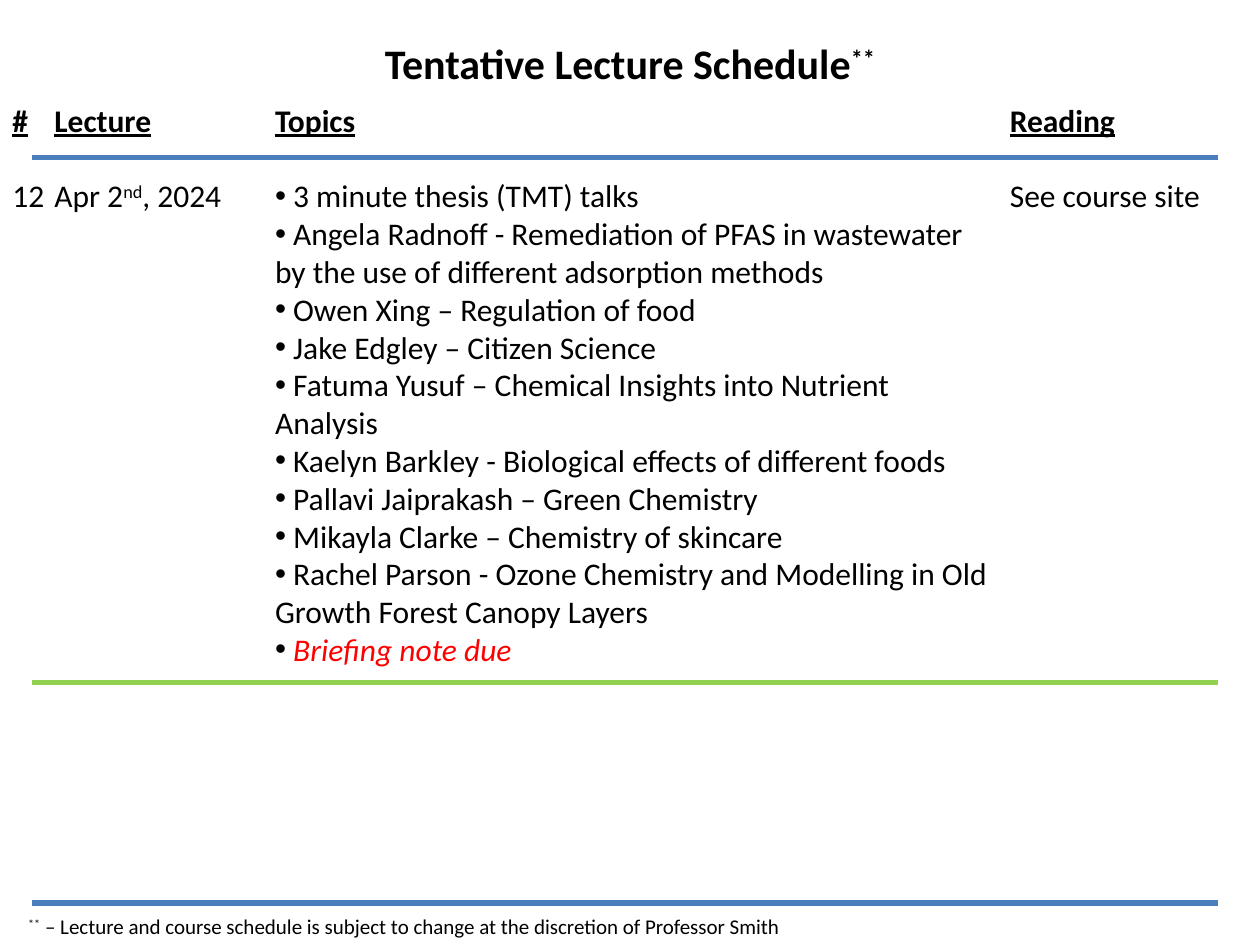
from dataclasses import dataclass

from lxml.etree import SubElement
from pptx import Presentation
from pptx.dml.color import RGBColor
from pptx.enum.shapes import MSO_CONNECTOR
from pptx.enum.text import MSO_ANCHOR, MSO_AUTO_SIZE, PP_ALIGN
from pptx.oxml.ns import qn
from pptx.util import Pt

INK = {"black": "000000", "red": "FF0000", "blue": "4B7EBC", "green": "92D050"}
FONT = "Calibri"
TOP, GAP = 54, 21.6


@dataclass(frozen=True)
class Span:
    text: str
    bold: bool = False
    under: bool = False
    slant: bool = False
    raised: bool = False
    ink: str = "black"


@dataclass(frozen=True)
class Line:
    spans: tuple[Span, ...]
    bullet: bool = False
    after: float = 0


@dataclass(frozen=True)
class Block:
    left: float
    top: float
    width: float
    height: float
    lines: tuple[Line, ...]
    size: float = 18
    align: PP_ALIGN = PP_ALIGN.LEFT


@dataclass(frozen=True)
class Rule:
    top: float
    ink: str


def head(text: str) -> Line:
    return Line((Span(text, bold=True, under=True),), after=GAP)


def column(left: float, width: float, title: str, *spans: Span) -> Block:
    return Block(left, TOP, width, 73, (head(title), Line(spans)))


def style(run, span: Span, size: float) -> None:
    font = run.font
    font.name, font.size = FONT, Pt(size)
    font.bold, font.italic, font.underline = span.bold, span.slant, span.under
    font.color.rgb = RGBColor.from_string(INK[span.ink])
    if span.raised:
        run._r.get_or_add_rPr().set("baseline", "30000")


def format_line(para, line: Line, block: Block) -> None:
    para.alignment = block.align
    para.line_spacing = 1.0
    para.space_before, para.space_after = Pt(0), Pt(line.after)
    props = para._p.get_or_add_pPr()
    props.set("marL", "0")
    props.set("indent", "0")
    if line.bullet:
        SubElement(props, qn("a:buFont"), typeface="Arial")
        SubElement(props, qn("a:buChar"), char="•")
    else:
        SubElement(props, qn("a:buNone"))
    for span in line.spans[1:]:
        para.add_run().text = span.text
    for run, span in zip(para.runs, line.spans):
        style(run, span, block.size)


def fill_block(shape, block: Block) -> None:
    shape.left, shape.top = Pt(block.left), Pt(block.top)
    shape.width, shape.height = Pt(block.width), Pt(block.height)
    frame = shape.text_frame
    frame.word_wrap = True
    frame.auto_size = MSO_AUTO_SIZE.NONE
    frame.vertical_anchor = MSO_ANCHOR.TOP
    frame.text = "\n".join(line.spans[0].text for line in block.lines)
    for para, line in zip(frame.paragraphs, block.lines):
        format_line(para, line, block)


def draw_rule(slide, rule: Rule) -> None:
    bar = slide.shapes.add_connector(
        MSO_CONNECTOR.STRAIGHT, Pt(18), Pt(rule.top), Pt(696), Pt(rule.top))
    bar.line.color.rgb = RGBColor.from_string(INK[rule.ink])
    bar.line.width = Pt(3)
    SubElement(bar._element.spPr, qn("a:effectLst"))


TALKS = (
    "3 minute thesis (TMT) talks",
    "Angela Radnoff - Remediation of PFAS in wastewater by the use of "
    "different adsorption methods",
    "Owen Xing – Regulation of food",
    "Jake Edgley – Citizen Science",
    "Fatuma Yusuf – Chemical Insights into Nutrient Analysis",
    "Kaelyn Barkley - Biological effects of different foods",
    "Pallavi Jaiprakash – Green Chemistry",
    "Mikayla Clarke – Chemistry of skincare",
    "Rachel Parson - Ozone Chemistry and Modelling in Old Growth Forest "
    "Canopy Layers",
)

TITLE = Block(210, 18, 300, 36, (
    Line((Span("Tentative Lecture Schedule", bold=True),
          Span("**", bold=True, raised=True))),
), 24, PP_ALIGN.CENTER)

TOPICS = Block(150, TOP, 426, 334, (
    head("Topics"),
    *(Line((Span(f" {talk}"),), bullet=True) for talk in TALKS),
    Line((Span(" "), Span("Briefing note due", slant=True, ink="red")),
         bullet=True),
))

BOXES = (
    column(0, 48, "#", Span("12")),
    column(24, 126, "Lecture", Span("Apr 2"), Span("nd", raised=True),
           Span(", 2024")),
    column(570, 138, "Reading", Span("See course site")),
    Block(9, 518.4, 450, 21.6, (
        Line((Span("**", raised=True),
              Span(" – Lecture and course schedule is subject to change at "
                   "the discretion of Professor Smith"))),
    ), 12),
)

RULES = (Rule(90, "blue"), Rule(390, "green"), Rule(516, "blue"))


def main() -> None:
    deck = Presentation()
    deck.slide_width, deck.slide_height = Pt(720), Pt(540)
    slide = deck.slides.add_slide(deck.slide_layouts[1])
    fill_block(slide.shapes.title, TITLE)
    fill_block(slide.placeholders[1], TOPICS)
    for block in BOXES:
        fill_block(slide.shapes.add_textbox(0, 0, 0, 0), block)
    for rule in RULES:
        draw_rule(slide, rule)
    deck.save("out.pptx")


if __name__ == "__main__":
    main()
